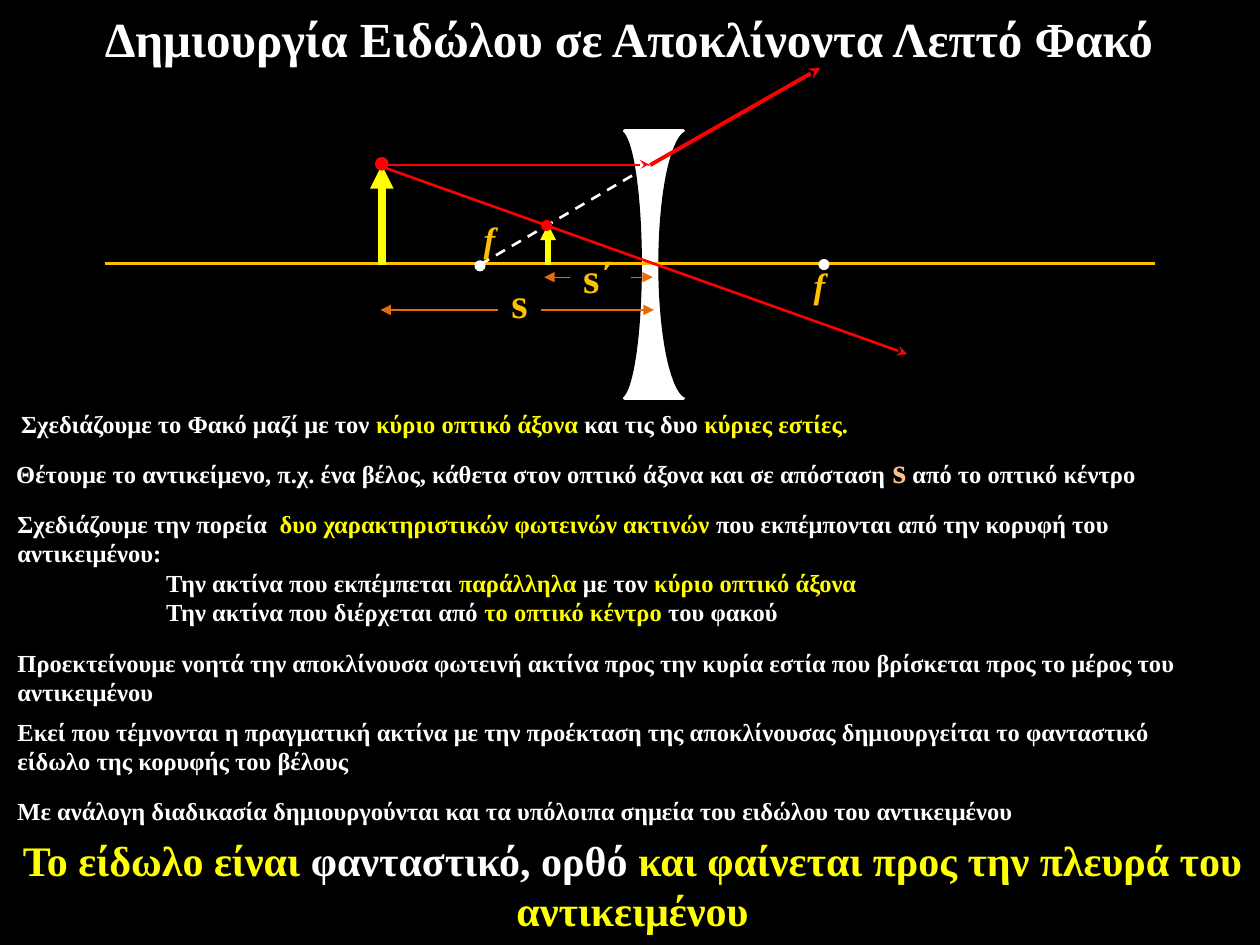
from lxml.etree import SubElement
from pptx import Presentation
from pptx.dml.color import RGBColor
from pptx.enum.dml import MSO_LINE
from pptx.enum.shapes import MSO_CONNECTOR, MSO_SHAPE
from pptx.enum.text import MSO_ANCHOR, MSO_AUTO_SIZE, PP_ALIGN
from pptx.oxml.ns import qn
from pptx.util import Inches, Pt

SLIDE_WIDTH, SLIDE_HEIGHT = Inches(10), Inches(7.5)
COLUMN, ROW = SLIDE_WIDTH / 100, SLIDE_HEIGHT / 75
FONT = "Times New Roman"
BLACK, WHITE, YELLOW, RED = "000000", "FFFFFF", "FFFF00", "FF0000"
GOLD, ORANGE, PEACH = "FFC000", "E46C0A", "FAC090"
OBJECT_X, IMAGE_X, LENS_X = 30.3, 43.5, 51.6
AXIS_Y, TIP_Y = 20.9, 13.1
LENS_TOP, LENS_HEIGHT = 10.4, 21.2


def colour(hex_string):
    return RGBColor.from_string(hex_string)


def place(left, top, width, height):
    return (round(left * COLUMN), round(top * ROW),
            round(width * COLUMN), round(height * ROW))


def add_solid(page, kind, area, fill, line_width=0.75):
    shape = page.shapes.add_shape(kind, *place(*area))
    shape.shadow.inherit = False
    shape.fill.solid()
    shape.fill.fore_color.rgb = colour(fill)
    shape.line.color.rgb = colour(fill)
    shape.line.width = Pt(line_width)
    return shape


def add_dot(page, x, y, fill, size=0.6):
    area = (x - size / 2, y - size / 2, size, size)
    return add_solid(page, MSO_SHAPE.OVAL, area, fill, line_width=2)


def add_line(page, start, end, line_colour, width, head=None, tail=None, dashed=False):
    line = page.shapes.add_connector(
        MSO_CONNECTOR.STRAIGHT, *place(*start, *end))
    line.line.color.rgb = colour(line_colour)
    line.line.width = Pt(width)
    if dashed:
        line.line.dash_style = MSO_LINE.DASH
    outline = line.line._get_or_add_ln()
    for tag, arrow in (("a:headEnd", head), ("a:tailEnd", tail)):
        if arrow:
            SubElement(outline, qn(tag)).set("type", arrow)
    SubElement(line._element.spPr, qn("a:effectLst"))
    return line


def write(shape, spans, size=14, align=PP_ALIGN.LEFT, italic=False, wrap=True,
          grow=False, spacing=None):
    frame = shape.text_frame
    frame.word_wrap = wrap
    frame.vertical_anchor = MSO_ANCHOR.TOP
    if grow:
        frame.auto_size = MSO_AUTO_SIZE.SHAPE_TO_FIT_TEXT
    para = frame.paragraphs[0]
    para.alignment = align
    if spacing:
        para.line_spacing = Pt(spacing)
    for text, text_colour, *own_size in spans:
        span = para.add_run()
        span.text = text
        font = span.font
        font.name = FONT
        font.size = Pt(own_size[0] if own_size else size)
        font.bold = True
        font.italic = italic
        font.color.rgb = colour(text_colour)


def add_text(page, area, spans, **style):
    box = page.shapes.add_textbox(*place(*area))
    write(box, spans, **style)
    return box


def add_lens(page):
    add_solid(page, MSO_SHAPE.RECTANGLE, (49.6, LENS_TOP, 4.6, LENS_HEIGHT),
              WHITE, line_width=2)
    for left, width, flipped in ((47.5, 3.4, False), (52.3, 4.7, True)):
        side = add_solid(page, MSO_SHAPE.ARC,
                         (left, LENS_TOP, width, LENS_HEIGHT), BLACK)
        side.adjustments[0] = 162
        side.adjustments[1] = 53.74
        if flipped:
            side._element.spPr.xfrm.set("flipH", "1")


def add_axis(page):
    add_line(page, (8.3, AXIS_Y), (91.7, AXIS_Y), GOLD, 1.5)
    for x, y in ((38.1, 21.1), (65.4, 21)):
        add_dot(page, x, y, WHITE)
    for left, top in ((37.4, 16.8), (63.6, 20.4)):
        add_text(page, (left, top, 2.9, 4.4), [("f", GOLD)],
                 size=20, italic=True, wrap=False, grow=True)


def add_distance(page, start, end, y, label, area, spacing, wrap):
    add_line(page, (start, y), (end, y), ORANGE, 0.75,
             head="triangle", tail="triangle")
    mask = add_solid(page, MSO_SHAPE.RECTANGLE, area, BLACK)
    write(mask, [(label, GOLD)], size=24, spacing=spacing, wrap=wrap, grow=True)


def add_rays(page):
    tip, lens_point = (OBJECT_X, TIP_Y), (LENS_X, TIP_Y)
    add_line(page, (IMAGE_X, 21), (IMAGE_X, 17.8), YELLOW, 3, tail="triangle")
    add_line(page, (OBJECT_X, 21), tip, YELLOW, 4.5, tail="triangle")
    add_dot(page, OBJECT_X, 13, RED, size=0.8)
    add_distance(page, 30.2, 51.9, 24.6, "s", (39.6, 23.5, 3.3, 3.3), 14, False)
    add_line(page, tip, lens_point, RED, 1.5, tail="stealth")
    add_line(page, lens_point, (65.1, 5.4), RED, 2.25, tail="stealth")
    add_line(page, (30.5, 13.3), (72, 28.1), RED, 1.5, tail="stealth")
    add_line(page, (38.1, 21), lens_point, WHITE, 1.5, dashed=True)
    add_dot(page, 43.4, 17.9, RED)
    add_distance(page, 43.2, 51.8, 22, "s΄", (45.3, 21.8, 4.7, 2.7), 12, True)


def add_steps(page):
    steps = [
        ((0.7, 32, 95.7, 3.9),
         [("Σχεδιάζουμε το Φακό μαζί με τον ", WHITE),
          ("κύριο οπτικό άξονα ", YELLOW),
          ("και τις δυο ", WHITE), ("κύριες εστίες.", YELLOW)]),
        ((0.3, 35.1, 92.2, 4),
         [("Θέτουμε το αντικείμενο, π.χ. ένα βέλος, κάθετα στον οπτικό άξονα "
           "και σε απόσταση ", WHITE),
          ("s", PEACH, 20), (" από το οπτικό κέντρο", WHITE)]),
        ((0.4, 39.9, 97.3, 6.3),
         [("Σχεδιάζουμε την πορεία  ", WHITE),
          ("δυο χαρακτηριστικών φωτεινών ακτινών ", YELLOW),
          ("που εκπέμπονται από την κορυφή του αντικειμένου:", WHITE)]),
        ((12.2, 44.6, 59.8, 3.8),
         [("Την ακτίνα που εκπέμπεται ", WHITE), ("παράλληλα", YELLOW),
          (" με τον ", WHITE), ("κύριο οπτικό άξονα", YELLOW)]),
        ((12.2, 46.9, 51.8, 4.3),
         [("Την ακτίνα που διέρχεται από ", WHITE),
          ("το οπτικό κέντρο ", YELLOW), ("του φακού", WHITE)]),
        ((0.4, 50.9, 99.6, 5.6),
         [("Προεκτείνουμε νοητά την αποκλίνουσα φωτεινή ακτίνα προς την κυρία "
           "εστία που βρίσκεται προς το μέρος του αντικειμένου", WHITE)]),
        ((0.4, 56.4, 92.1, 5.9),
         [("Εκεί που τέμνονται η πραγματική ακτίνα με την προέκταση της "
           "αποκλίνουσας δημιουργείται το φανταστικό είδωλο της κορυφής του "
           "βέλους", WHITE)]),
        ((0.4, 62.7, 92.1, 3.5),
         [("Με ανάλογη διαδικασία δημιουργούνται και τα υπόλοιπα σημεία του "
           "ειδώλου του αντικειμένου", WHITE)]),
    ]
    for area, spans in steps:
        add_text(page, area, spans)


def main():
    deck = Presentation()
    deck.slide_width, deck.slide_height = SLIDE_WIDTH, SLIDE_HEIGHT
    page = deck.slides.add_slide(deck.slide_layouts[6])
    page.background.fill.solid()
    page.background.fill.fore_color.rgb = colour(BLACK)
    add_lens(page)
    add_axis(page)
    add_text(page, (-0.1, 0.2, 100, 5.3),
             [("Δημιουργία Ειδώλου σε Αποκλίνοντα Λεπτό Φακό", WHITE)],
             size=28, align=PP_ALIGN.CENTER)
    add_rays(page)
    add_steps(page)
    add_text(page, (0.4, 65.7, 99.6, 8.8),
             [("Το είδωλο είναι ", YELLOW), ("φανταστικό, ορθό ", WHITE),
              ("και φαίνεται προς την πλευρά του αντικειμένου", YELLOW)],
             size=24, align=PP_ALIGN.CENTER)
    deck.save("out.pptx")


if __name__ == "__main__":
    main()
